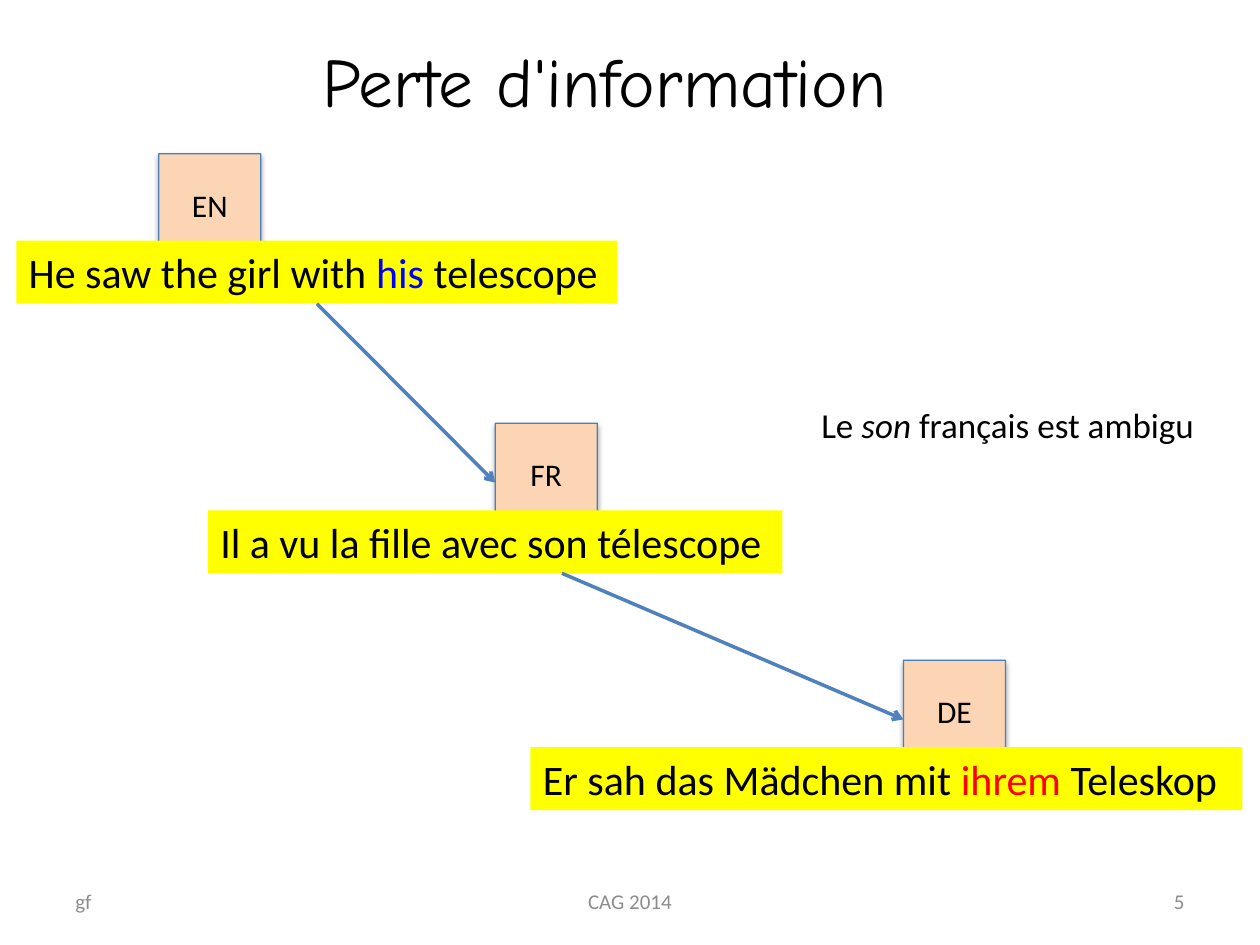
from lxml import etree
from pptx import Presentation
from pptx.dml.color import RGBColor
from pptx.enum.shapes import MSO_CONNECTOR, MSO_SHAPE
from pptx.enum.text import MSO_ANCHOR, MSO_AUTO_SIZE, PP_ALIGN
from pptx.oxml import parse_xml
from pptx.oxml.ns import nsdecls, qn
from pptx.util import Inches, Pt

LEFT, CENTER, RIGHT = PP_ALIGN.LEFT, PP_ALIGN.CENTER, PP_ALIGN.RIGHT
MIDDLE, TOP = MSO_ANCHOR.MIDDLE, MSO_ANCHOR.TOP
FIXED, GROW = MSO_AUTO_SIZE.NONE, MSO_AUTO_SIZE.SHAPE_TO_FIT_TEXT
FOLDED_CORNER, RECTANGLE = MSO_SHAPE.FOLDED_CORNER, MSO_SHAPE.RECTANGLE
STRAIGHT = MSO_CONNECTOR.STRAIGHT

SLIDE_WIDTH, SLIDE_HEIGHT = 10, 7.5
CARD_WIDTH, CARD_HEIGHT = 0.81, 0.94
CAPTION_DROP, CAPTION_HEIGHT = 0.69, 0.5
MARGIN = 0.5
BOTTOM_SIDE, LEFT_SIDE = 2, 1
BLACK, GREY, BLUE, RED = "000000", "8C8C8C", "0000FF", "FF0000"

STEPS = [
    ("EN", 1.26, 1.22, 0.13, 4.77,
     [("He saw the girl with ", {}), ("his", {"color": BLUE}), (" telescope", {})]),
    ("FR", 3.93, 3.36, 1.65, 4.56,
     [("Il a vu la fille avec son télescope", {})]),
    ("DE", 7.17, 5.24, 4.21, 5.65,
     [("Er sah das Mädchen mit ", {}), ("ihrem", {"color": RED}), (" Teleskop", {})]),
]
SHADOW = (
    f'<a:effectLst {nsdecls("a")}><a:outerShdw blurRad="{Pt(3.1)}" dist="{Pt(1.8)}" '
    'dir="5400000" rotWithShape="0"><a:srgbClr val="000000"><a:alpha val="35000"/>'
    '</a:srgbClr></a:outerShdw></a:effectLst>'
)


def rgb(color):
    return RGBColor.from_string(color)


def box(*lengths):
    return [Inches(length) for length in lengths]


def write(shape, runs, size, color=BLACK, font="Calibri", align=LEFT,
          anchor=MIDDLE, wrap=True, fit=FIXED):
    frame = shape.text_frame
    frame_format = {"word_wrap": wrap, "auto_size": fit, "vertical_anchor": anchor}
    for name, value in frame_format.items():
        setattr(frame, name, value)
    paragraph = frame.paragraphs[0]
    paragraph.alignment = align
    for text, changes in runs:
        run = paragraph.add_run()
        run.text = text
        run_format = {"name": font, "size": Pt(size), "italic": changes.get("italic")}
        for name, value in run_format.items():
            setattr(run.font, name, value)
        run.font.color.rgb = rgb(changes.get("color", color))


def add_filled(slide, kind, position, fill):
    shape = slide.shapes.add_shape(kind, *box(*position))
    shape.shadow.inherit = False
    shape.fill.solid()
    shape.fill.fore_color.rgb = rgb(fill)
    shape.line.fill.background()
    return shape


def add_card(slide, language, left, top):
    card = add_filled(slide, FOLDED_CORNER, (left, top, CARD_WIDTH, CARD_HEIGHT), "FCD5B5")
    card.line.color.rgb = rgb("4B7EBC")
    card.line.width = Pt(0.75)
    properties = card._element.spPr
    properties.replace(properties.find(qn("a:effectLst")), parse_xml(SHADOW))
    write(card, [(language, {})], 18, align=CENTER)
    return card


def add_caption(slide, runs, left, top, width):
    caption = add_filled(slide, RECTANGLE, (left, top, width, CAPTION_HEIGHT), "FFFF00")
    write(caption, runs, 24, anchor=TOP, wrap=False, fit=GROW)
    return caption


def add_label(slide, position, runs, size, **text_format):
    write(slide.shapes.add_textbox(*box(*position)), runs, size, **text_format)


def add_arrow(slide, card, start=(0, 0), caption=None):
    arrow = slide.shapes.add_connector(STRAIGHT, *box(*start), card.left, card.top)
    if caption is not None:
        arrow.begin_connect(caption, BOTTOM_SIDE)
    arrow.end_connect(card, LEFT_SIDE)
    arrow.line.color.rgb = rgb("4F81BD")
    arrow.line.width = Pt(2)
    etree.SubElement(arrow.line._get_or_add_ln(), qn("a:tailEnd"), type="arrow")
    etree.SubElement(arrow._element.spPr, qn("a:effectLst"))


def add_title(slide, text):
    title = slide.shapes.title
    places = zip(("left", "top", "width", "height"), box(MARGIN, 0.3, 8.6, 0.66))
    for name, value in places:
        setattr(title, name, value)
    write(title, [(text, {})], 39.6, font="Comic Neue", align=CENTER)


def add_footer(slide):
    side, middle = 2.33, 3.17
    columns = [
        ("gf", MARGIN, side, LEFT),
        ("CAG 2014", (SLIDE_WIDTH - middle) / 2, middle, CENTER),
        ("5", SLIDE_WIDTH - MARGIN - side, side, RIGHT),
    ]
    for text, left, width, align in columns:
        add_label(slide, (left, 6.95, width, 0.4), [(text, {})], 12, color=GREY, align=align)


def main():
    presentation = Presentation()
    presentation.slide_width, presentation.slide_height = box(SLIDE_WIDTH, SLIDE_HEIGHT)
    slide = presentation.slides.add_slide(presentation.slide_layouts[5])
    add_title(slide, "Perte d'information")
    cards = [add_card(slide, language, left, top) for language, left, top, *_ in STEPS]
    captions = [add_caption(slide, runs, left, top + CAPTION_DROP, width)
                for _, _, top, left, width, runs in STEPS]
    add_arrow(slide, cards[1], caption=captions[0])
    add_arrow(slide, cards[2], start=(4.46, 4.55))
    add_label(slide, (6.42, 3.15, 3.2, 0.44),
              [("Le ", {}), ("son ", {"italic": True}), ("français est ambigu", {})],
              20, anchor=TOP, wrap=False, fit=GROW)
    add_footer(slide)
    presentation.save("out.pptx")


if __name__ == "__main__":
    main()
